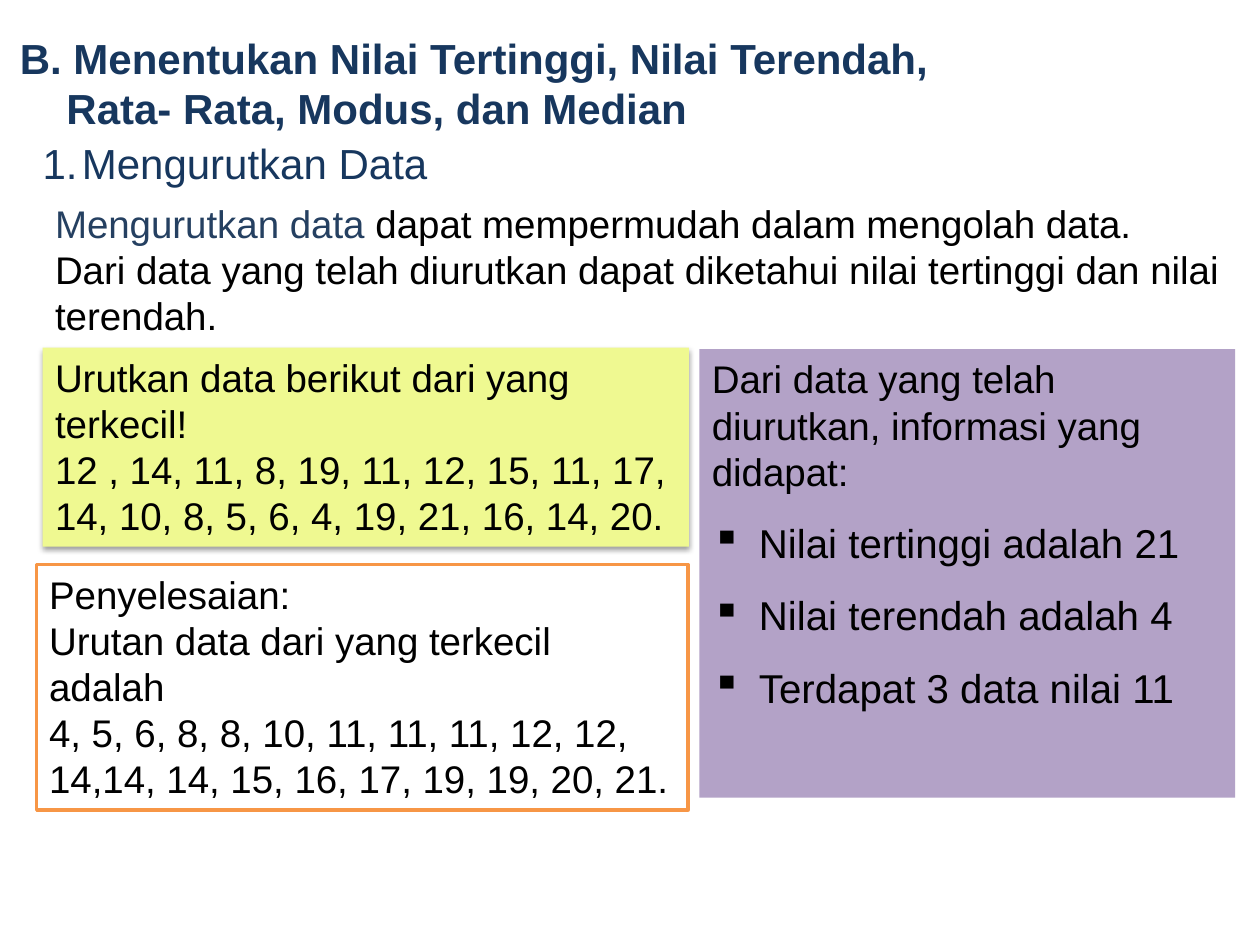
from lxml import etree
from pptx import Presentation
from pptx import util as u
from pptx.dml.color import RGBColor
from pptx.enum import shapes, text
from pptx.oxml import parse_xml
from pptx.oxml.ns import qn

NAVY, STEEL, BLACK, WHITE = "17375E", "254061", "000000", "FFFFFF"
ORANGE, LIME, LILAC = "F79646", "EFF991", "B3A2C7"
DRAWING_NS = "http://schemas.openxmlformats.org/drawingml/2006/main"


def color(hex_code):
    return RGBColor.from_string(hex_code)


def add_label(slide, box, wrap=True):
    frame = slide.shapes.add_textbox(*map(u.Cm, box)).text_frame
    frame.word_wrap = wrap
    return frame


def add_panel(slide, box, fill, outline=None):
    panel = slide.shapes.add_shape(shapes.MSO_SHAPE.RECTANGLE, *map(u.Cm, box))
    panel.shadow.inherit = False
    panel.fill.solid()
    panel.fill.fore_color.rgb = color(fill)
    if outline:
        panel.line.color.rgb = color(outline)
        panel.line.width = u.Pt(2)
    else:
        panel.line.fill.background()
    panel.text_frame.word_wrap = True
    panel.text_frame.vertical_anchor = text.MSO_ANCHOR.TOP
    return panel


def add_line(frame, words, size=22, ink=BLACK, bold=False, left=0, hanging=0,
             bullet=None, spacing=None):
    """Fill the empty first paragraph, or append one; bullet is (tag, attributes)."""
    first = frame.paragraphs[0]
    line = first if not first.runs else frame.add_paragraph()
    line.alignment = text.PP_ALIGN.LEFT
    if spacing:
        line.line_spacing = spacing
    properties = line._p.get_or_add_pPr()
    properties.set("marL", str(u.Cm(left)))
    properties.set("indent", str(-u.Cm(hanging)))
    if bullet:
        tag, attributes = bullet
        etree.SubElement(properties, qn(tag), attributes)
    line.font.name = "Arial"
    line.font.size = u.Pt(size)
    line.font.bold = bold
    line.font.color.rgb = color(ink)
    line.add_run().text = words
    return line


def add_soft_shadow(panel):
    effects = panel._element.spPr.find(qn("a:effectLst"))
    effects.append(parse_xml(
        f'<a:outerShdw xmlns:a="{DRAWING_NS}" blurRad="{u.Pt(3.1)}" '
        f'dist="{u.Pt(1.6)}" dir="5400000" rotWithShape="0">'
        f'<a:srgbClr val="{BLACK}"><a:alpha val="38000"/></a:srgbClr></a:outerShdw>'))


def heading(slide, box):
    left, top, width, height = box
    # Section title
    title = add_label(slide, (left, top, width, 2.31))
    add_line(title, "B. Menentukan Nilai Tertinggi, Nilai Terendah,", 24, NAVY, True)
    add_line(title, "Rata- Rata, Modus, dan Median", 24, NAVY, True, left=0.94)
    # Numbered subtitle
    subtitle = add_label(slide, (left, top + 2.11, 8.81, height - 2.11), wrap=False)
    add_line(subtitle, "Mengurutkan Data", 24, NAVY, left=1.25, hanging=0.79,
             bullet=("a:buAutoNum", {"type": "arabicPeriod"}))


def introduction(slide, box):
    frame = add_panel(slide, box, WHITE).text_frame
    opening = add_line(frame, "Mengurutkan data ")
    opening.runs[0].font.color.rgb = color(STEEL)
    opening.add_run().text = "dapat mempermudah dalam mengolah data."
    add_line(frame, "Dari data yang telah diurutkan dapat diketahui "
                    "nilai tertinggi dan nilai terendah.")


def solution(slide, box):
    frame = add_panel(slide, box, WHITE, ORANGE).text_frame
    for words in ("Penyelesaian:",
                  "Urutan data dari yang terkecil adalah",
                  "4, 5, 6, 8, 8, 10, 11, 11, 11, 12, 12,",
                  "14,14, 14, 15, 16, 17, 19, 19, 20, 21."):
        add_line(frame, words)


def exercise(slide, box):
    panel = add_panel(slide, box, LIME)
    add_soft_shadow(panel)
    for words in ("Urutkan data berikut dari yang terkecil!",
                  "12 , 14, 11, 8, 19, 11, 12, 15, 11, 17,",
                  "14, 10, 8, 5, 6, 4, 19, 21, 16, 14, 20."):
        add_line(panel.text_frame, words)


def findings(slide, box):
    frame = add_panel(slide, box, LILAC).text_frame
    add_line(frame, "Dari data yang telah diurutkan, informasi yang didapat:")
    for words in ("Nilai tertinggi adalah 21",
                  "Nilai terendah adalah 4",
                  "Terdapat 3 data nilai 11"):
        add_line(frame, words, 23, left=0.95, hanging=0.95, spacing=1.5,
                 bullet=("a:buChar", {"char": "▪"}))


def main():
    deck = Presentation()
    deck.slide_width, deck.slide_height = u.Cm(25.4), u.Cm(19.05)
    slide = deck.slides.add_slide(deck.slide_layouts[6])
    heading(slide, (0.15, 0.53, 21.31, 3.38))
    introduction(slide, (0.86, 3.91, 24.49, 3.07))
    solution(slide, (0.74, 11.38, 13.13, 4.95))
    exercise(slide, (0.86, 7.01, 13.03, 4.01))
    findings(slide, (14.1, 7.04, 10.8, 9.04))
    deck.save("out.pptx")


if __name__ == "__main__":
    main()
